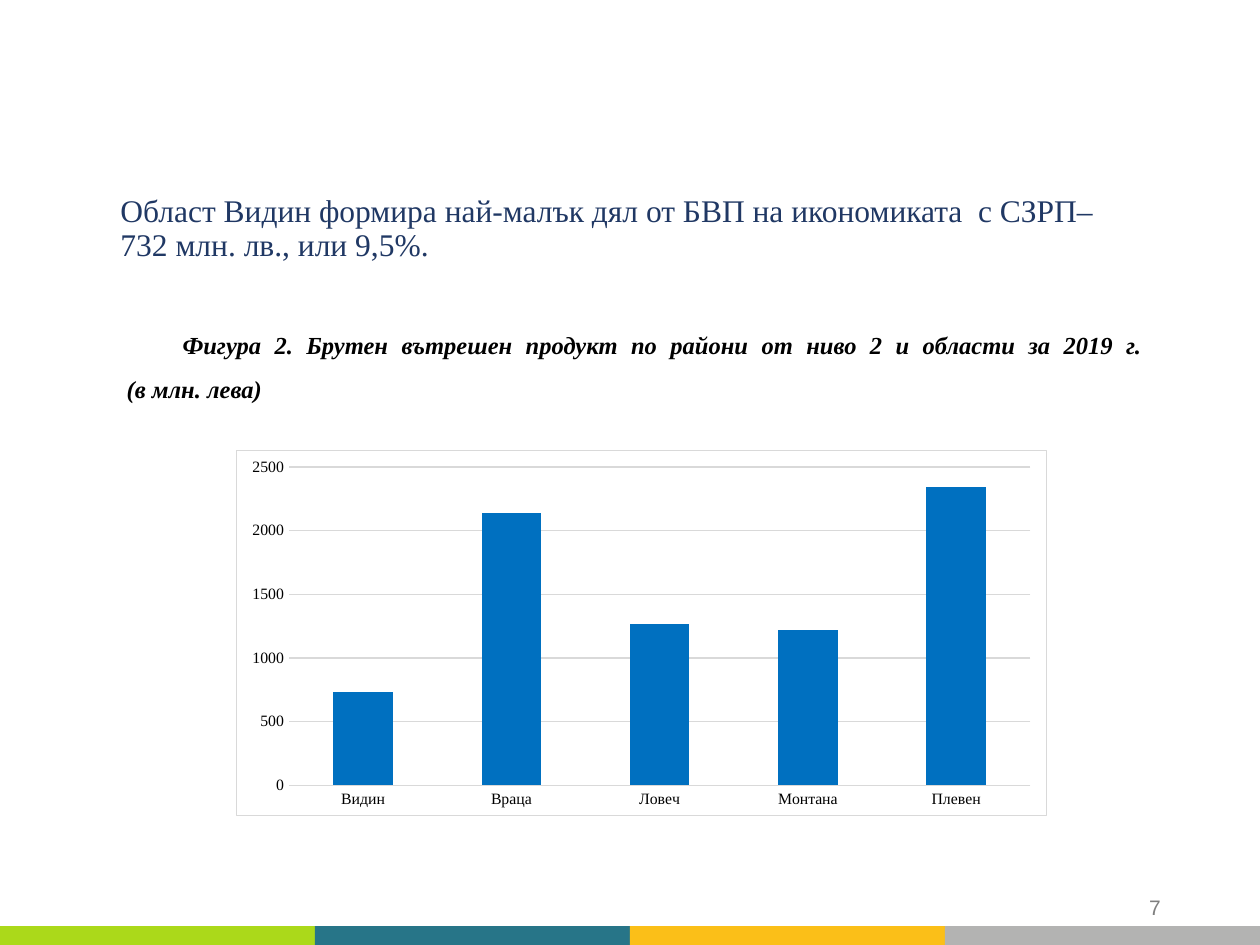
import pptx
import pptx.chart.data
import pptx.dml.color
import pptx.enum.chart
import pptx.enum.shapes
import pptx.enum.text
import pptx.oxml
import pptx.util
from pptx.util import Cm, Pt

COLORS = {
    "stripes": ["ABD91A", "277588", "FBBF18", "B3B3B2"],
    "number": "7F7F7F",
    "lead": "203864",
    "text": "000000",
    "bar": "0070C0",
    "grid": "D9D9D9",
    "paper": "FFFFFF",
}
SERIF = "Times New Roman"
GDP = {"Видин": 730, "Враца": 2140, "Ловеч": 1270, "Монтана": 1220, "Плевен": 2340}


def rgb(value):
    return pptx.dml.color.RGBColor.from_string(value)


def set_font(font, name, size, color):
    font.name = name
    font.size = Pt(size)
    font.color.rgb = rgb(color)


def add_text_box(slide, left, top, width, height):
    tf = slide.shapes.add_textbox(Cm(left), Cm(top), Cm(width), Cm(height)).text_frame
    tf.word_wrap = True
    return tf


def add_stripes(slide):
    width = 6.35
    for i, color in enumerate(COLORS["stripes"]):
        sp = slide.shapes.add_shape(
            pptx.enum.shapes.MSO_SHAPE.RECTANGLE,
            Cm(i * width), Cm(18.67), Cm(width), Cm(0.38))
        sp.shadow.inherit = False
        sp.fill.solid()
        sp.fill.fore_color.rgb = rgb(color)
        sp.line.fill.background()


def add_slide_number(slide):
    tf = add_text_box(slide, 17.93, 17.65, 5.72, 1.02)
    tf.vertical_anchor = pptx.enum.text.MSO_ANCHOR.BOTTOM
    p = tf.paragraphs[0]
    p.text = "7"
    p.alignment = pptx.enum.text.PP_ALIGN.RIGHT
    set_font(p.font, "Arial", 12, COLORS["number"])


def set_indent(p, left, first):
    pPr = p._p.get_or_add_pPr()
    pPr.set("marL", str(Cm(left)))
    pPr.set("indent", str(Cm(first)))


def add_body(slide):
    tf = add_text_box(slide, 1.88, 3.81, 21.39, 4.55)
    p = tf.paragraphs[0]
    p.text = "Област Видин формира най-малък дял от БВП на икономиката  с СЗРП– 732 млн. лв., или 9,5%."
    p.line_spacing = 0.9
    set_indent(p, 0.3, 0)
    set_font(p.font, SERIF, 18, COLORS["lead"])

    p = tf.add_paragraph()
    p.text = "Фигура 2. Брутен вътрешен продукт по райони от ниво 2 и области за 2019 г.\v (в млн. лева)"
    p.alignment = pptx.enum.text.PP_ALIGN.JUSTIFY
    p.line_spacing = 1.5
    p.space_before = Pt(30)
    p.space_after = Pt(6)
    set_indent(p, 0.3, 1.25)
    set_font(p.font, SERIF, 14, COLORS["text"])
    p.font.bold = True
    p.font.italic = True


def style_axis(axis):
    axis.major_tick_mark = pptx.enum.chart.XL_TICK_MARK.NONE
    axis.minor_tick_mark = pptx.enum.chart.XL_TICK_MARK.NONE
    axis.format.line.fill.background()
    set_font(axis.tick_labels.font, SERIF, 9, COLORS["text"])


def frame_chart(chart):
    spPr = pptx.oxml.parse_xml(
        '<c:spPr xmlns:c="http://schemas.openxmlformats.org/drawingml/2006/chart"'
        ' xmlns:a="http://schemas.openxmlformats.org/drawingml/2006/main">'
        f'<a:solidFill><a:srgbClr val="{COLORS["paper"]}"/></a:solidFill>'
        f'<a:ln w="{Pt(0.75)}"><a:solidFill><a:srgbClr val="{COLORS["grid"]}"/>'
        '</a:solidFill></a:ln></c:spPr>')
    chart._chartSpace.chart.addnext(spPr)


def add_gdp_chart(slide):
    data = pptx.chart.data.CategoryChartData(number_format="0")
    data.categories = list(GDP)
    data.add_series("Series 1", list(GDP.values()))
    chart = slide.shapes.add_chart(
        pptx.enum.chart.XL_CHART_TYPE.COLUMN_CLUSTERED,
        Cm(4.75), Cm(9.07), Cm(16.36), Cm(7.39), data).chart
    chart.has_legend = False
    chart.has_title = False
    set_font(chart.font, "Arial", 10, COLORS["text"])

    plot = chart.plots[0]
    plot.gap_width = 150
    plot.vary_by_categories = False
    fill = plot.series[0].format.fill
    fill.solid()
    fill.fore_color.rgb = rgb(COLORS["bar"])

    style_axis(chart.category_axis)
    axis = chart.value_axis
    style_axis(axis)
    axis.minimum_scale, axis.maximum_scale, axis.major_unit = 0, 2500, 500
    axis.tick_labels.number_format = "0"
    axis.tick_labels.number_format_is_linked = False
    line = axis.major_gridlines.format.line
    line.color.rgb = rgb(COLORS["grid"])
    line.width = Pt(0.75)
    frame_chart(chart)


def main():
    prs = pptx.Presentation()
    prs.slide_width, prs.slide_height = Cm(25.4), Cm(19.05)
    slide = prs.slides.add_slide(prs.slide_layouts[6])
    add_stripes(slide)
    add_slide_number(slide)
    add_body(slide)
    add_gdp_chart(slide)
    prs.save("out.pptx")


if __name__ == "__main__":
    main()
